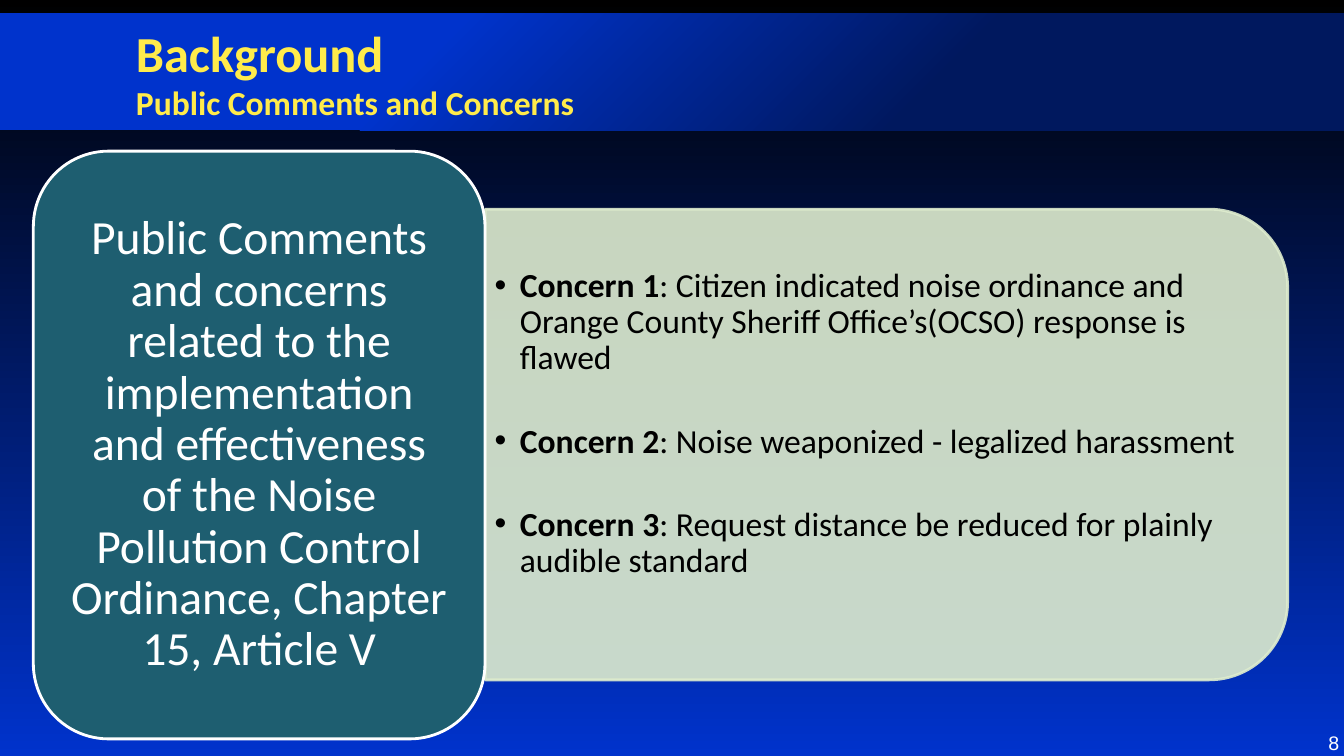
from dataclasses import dataclass

import pptx
import pptx.dml.color
import pptx.dml.fill
import pptx.enum.shapes
import pptx.enum.text
import pptx.oxml
import pptx.oxml.ns
import pptx.shapes.autoshape
import pptx.slide
import pptx.text.text
import pptx.util

Pt = pptx.util.Pt
Shapes = pptx.enum.shapes.MSO_SHAPE
Align = pptx.enum.text.PP_ALIGN
Anchor = pptx.enum.text.MSO_ANCHOR
DRAWING = pptx.oxml.ns.nsdecls("a")


@dataclass(frozen=True)
class Area:
    left: float
    top: float
    width: float
    height: float

    def lengths(self) -> list[pptx.util.Length]:
        return [Pt(value) for value in (self.left, self.top, self.width, self.height)]


@dataclass(frozen=True)
class Concern:
    label: str
    detail: str


@dataclass(frozen=True)
class Stop:
    position: float
    color: str


BAND = Area(0, 9.4, 960, 83.5)
TITLE = Area(90, 21.6, 843.8, 59.8)
NUMBER = Area(941.8, 518.4, 18.2, 21.6)
PANEL = Area(465.1, 31, 336.2, 573.1)
CONCERN_LIST = Area(346.3, 166.3, 557.3, 303.1)
CARD = Area(23.8, 108, 322.6, 419.8)

CONCERNS = [
    Concern("Concern 1", ": Citizen indicated noise ordinance and Orange County "
                         "Sheriff Office’s(OCSO) response is flawed"),
    Concern("Concern 2", ": Noise weaponized - legalized harassment"),
    Concern("Concern 3", ": Request distance be reduced for plainly audible standard"),
]
TOPIC = ("Public Comments and concerns related to the implementation and effectiveness "
         "of the Noise Pollution Control Ordinance, Chapter 15, Article V")


def rgb(color: str) -> pptx.dml.color.RGBColor:
    return pptx.dml.color.RGBColor.from_string(color)


def set_gradient(fill: pptx.dml.fill.FillFormat, angle: float, stops: list[Stop]) -> None:
    fill.gradient()
    fill.gradient_angle = angle
    for target, stop in zip(fill.gradient_stops, stops):
        target.position = stop.position
        target.color.rgb = rgb(stop.color)


def style(span: pptx.text.text._Run, size: float, color: str,
          bold: bool = False, name: str = "Calibri") -> None:
    span.font.name = name
    span.font.size = Pt(size)
    span.font.bold = bold
    span.font.color.rgb = rgb(color)


def add_block(page: pptx.slide.Slide, kind: Shapes, area: Area) -> pptx.shapes.autoshape.Shape:
    block = page.shapes.add_shape(kind, *area.lengths())
    block.shadow.inherit = False
    return block


def set_solid(block: pptx.shapes.autoshape.Shape, fill: str, line: str, opacity: int = 100) -> None:
    block.fill.solid()
    block.fill.fore_color.rgb = rgb(fill)
    block.line.color.rgb = rgb(line)
    block.line.width = Pt(2)
    if opacity < 100:
        for color in block.element.spPr.iter(pptx.oxml.ns.qn("a:srgbClr")):
            color.append(pptx.oxml.parse_xml(f'<a:alpha {DRAWING} val="{opacity * 1000}"/>'))


def add_text_box(page: pptx.slide.Slide, area: Area, wrap: bool = True) -> pptx.text.text.TextFrame:
    frame = page.shapes.add_textbox(*area.lengths()).text_frame
    frame.word_wrap = wrap
    return frame


def add_title(page: pptx.slide.Slide) -> None:
    frame = add_text_box(page, TITLE)
    frame.vertical_anchor = Anchor.MIDDLE
    para = frame.paragraphs[0]
    para.text = "Background\vPublic Comments and Concerns"
    for span, size in zip(para.runs, (36, 24)):
        style(span, size, "FFEB4B", bold=True)


def add_number(page: pptx.slide.Slide) -> None:
    frame = add_text_box(page, NUMBER, wrap=False)
    frame.text = "8"
    style(frame.paragraphs[0].runs[0], 14, "FFFFFF", name="Arial")


def add_bullet(para: pptx.text.text._Paragraph) -> None:
    properties = para._p.get_or_add_pPr()
    properties.set("marL", str(Pt(18)))
    properties.set("indent", str(Pt(-18)))
    properties.append(pptx.oxml.parse_xml(f'<a:buFont {DRAWING} typeface="Arial"/>'))
    properties.append(pptx.oxml.parse_xml(f'<a:buChar {DRAWING} char="•"/>'))


def add_concerns(page: pptx.slide.Slide) -> None:
    frame = add_text_box(page, CONCERN_LIST)
    frame.vertical_anchor = Anchor.MIDDLE
    frame.margin_bottom = Pt(33.5)
    for index, concern in enumerate(CONCERNS):
        para = frame.add_paragraph() if index else frame.paragraphs[0]
        add_bullet(para)
        para.line_spacing = 0.9
        if index:
            para.space_before = Pt(33.5)
        for text, bold in ((concern.label, True), (concern.detail, False)):
            span = para.add_run()
            span.text = text
            style(span, 24, "000000", bold)


def add_card(page: pptx.slide.Slide) -> None:
    card = add_block(page, Shapes.ROUNDED_RECTANGLE, CARD)
    set_solid(card, "1E5E70", "FFFFFF")
    frame = card.text_frame
    frame.word_wrap = True
    frame.vertical_anchor = Anchor.MIDDLE
    frame.margin_left = frame.margin_right = Pt(10)
    frame.margin_top = frame.margin_bottom = Pt(5)
    frame.text = TOPIC
    para = frame.paragraphs[0]
    para.alignment = Align.CENTER
    para.line_spacing = 0.9
    style(para.runs[0], 34, "FFFFFF")


def main() -> None:
    deck = pptx.Presentation()
    deck.slide_width, deck.slide_height = Pt(960), Pt(540)
    page = deck.slides.add_slide(deck.slide_layouts[6])
    set_gradient(page.background.fill, 270, [Stop(0, "000000"), Stop(1, "0033CC")])
    band = add_block(page, Shapes.RECTANGLE, BAND)
    set_gradient(band.fill, 315, [Stop(0.32, "0033CC"), Stop(0.69, "00185E")])
    band.line.fill.background()
    add_title(page)
    add_number(page)
    panel = add_block(page, Shapes.ROUND_2_SAME_RECTANGLE, PANEL)
    panel.rotation = 90
    set_solid(panel, "DEECCE", "DEECCE", opacity=90)
    add_concerns(page)
    add_card(page)
    deck.save("out.pptx")


if __name__ == "__main__":
    main()
